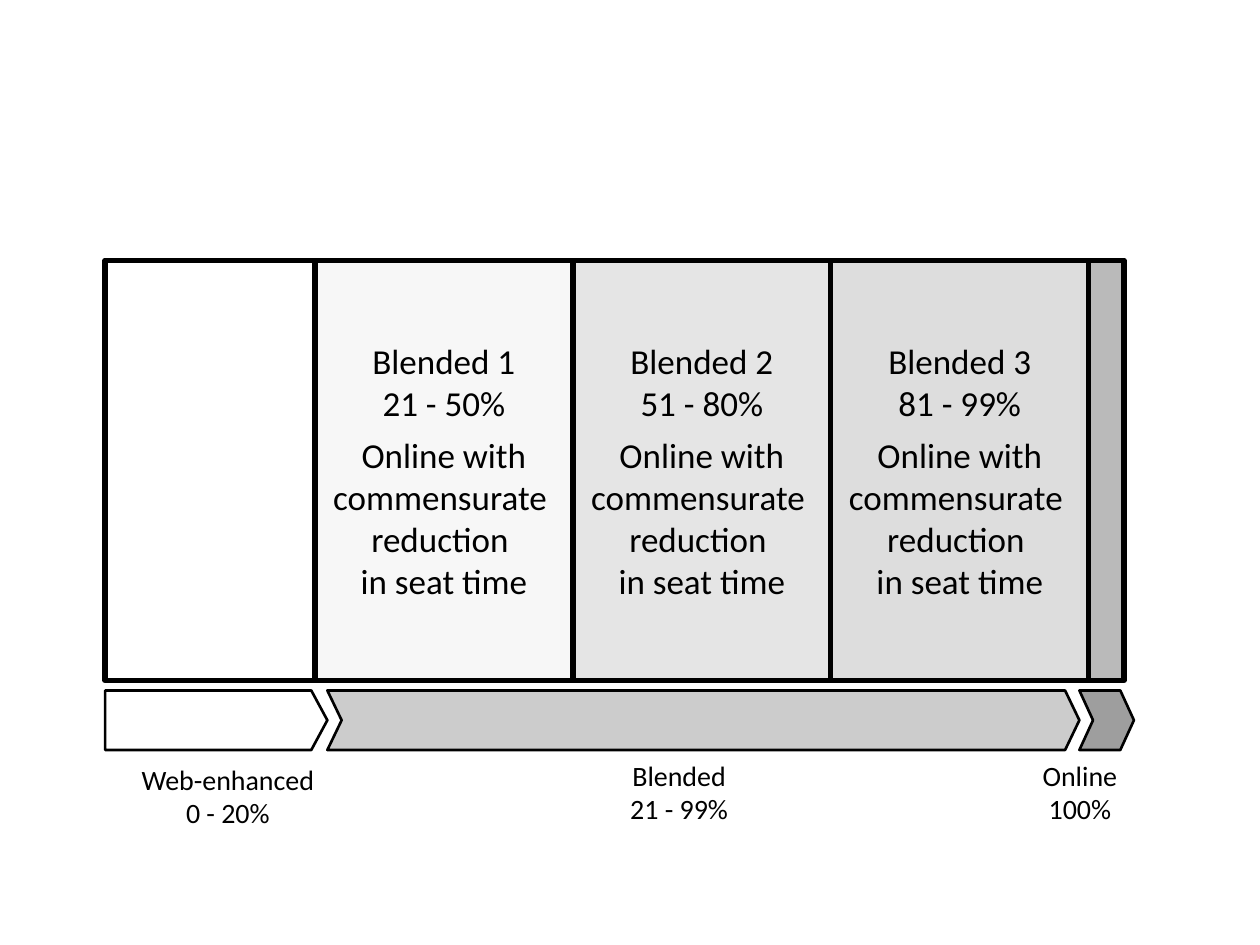
from lxml import etree
from pptx import Presentation
from pptx import util as u
from pptx.dml.color import RGBColor
from pptx.enum import shapes, text
from pptx.oxml.ns import qn

COLORS = {
    "white": "FFFFFF", "black": "000000", "navy": "000066", "near_black": "0D0D0D",
    "pale": "D9D9D9", "mid": "808080", "dark": "595959",
}
FONT = "Calibri"

# title, share, fill
LEVELS = [
    ("Blended 1", "21 - 50%", "pale"),
    ("Blended 2", "51 - 80%", "mid"),
    ("Blended 3", "81 - 99%", "dark"),
]
SEAT_TIME = ["Online with", "commensurate ", "reduction ", "in seat time"]

# shape, left, right, adjustment, fill, opacity %
ARROWS = [
    (shapes.MSO_SHAPE.PENTAGON, 2.12, 6.6, 0.27, "white", 50),
    (shapes.MSO_SHAPE.CHEVRON, 6.6, 21.76, 0.24, "mid", 40),
    (shapes.MSO_SHAPE.CHEVRON, 21.76, 22.86, 0.25, "near_black", 40),
]
# lines, left, top, width
LABELS = [
    (["Web-enhanced", "0 - 20%"], 2.59, 15.37, 4.01),
    (["Blended", "21 - 99%"], 12.4, 15.29, 2.58),
    (["Online", "100%"], 20.96, 15.29, 1.62),
]

BAND_LEFT, BAND_TOP, BAND_HEIGHT = 2.12, 5.25, 8.47
LEVELS_LEFT, LEVEL_WIDTH = 6.35, 5.2
LEVELS_RIGHT = LEVELS_LEFT + len(LEVELS) * LEVEL_WIDTH
BAND_RIGHT = 22.66
ARROW_TOP, ARROW_HEIGHT = 13.92, 1.2
LABEL_HEIGHT = 1.35


def rgb(name):
    return RGBColor.from_string(COLORS[name])


def add_filled(slide, kind, left, right, top, height, fill, opacity, line="black", weight=3):
    """Add an outlined shape whose fill has the given opacity in percent."""
    shape = slide.shapes.add_shape(
        kind, u.Cm(left), u.Cm(top), u.Cm(right - left), u.Cm(height))
    shape.shadow.inherit = False
    shape.fill.solid()
    shape.fill.fore_color.rgb = rgb(fill)
    color = shape.fill._xPr.find(qn("a:solidFill"))[0]
    etree.SubElement(color, qn("a:alpha"), val=str(opacity * 1000))
    shape.line.color.rgb = rgb(line)
    shape.line.width = u.Pt(weight)
    return shape


def write_lines(frame, lines, size):
    frame.word_wrap = False
    frame.text = "\n".join(lines)
    for paragraph in frame.paragraphs:
        paragraph.alignment = text.PP_ALIGN.CENTER
        paragraph.font.name = FONT
        paragraph.font.size = u.Pt(size)
        paragraph.font.color.rgb = rgb("black")


def add_band(slide):
    def panel(left, right, fill, opacity, **outline):
        return add_filled(slide, shapes.MSO_SHAPE.RECTANGLE, left, right,
                          BAND_TOP, BAND_HEIGHT, fill, opacity, **outline)

    panel(BAND_LEFT, LEVELS_LEFT, "white", 60)
    panel(LEVELS_LEFT, LEVELS_RIGHT, "white", 60, line="navy", weight=1.5)
    panel(LEVELS_RIGHT, BAND_RIGHT, "black", 27)
    for index, (title, share, fill) in enumerate(LEVELS):
        left = LEVELS_LEFT + index * LEVEL_WIDTH
        frame = panel(left, left + LEVEL_WIDTH, fill, 20).text_frame
        frame.vertical_anchor = text.MSO_ANCHOR.MIDDLE
        write_lines(frame, [title, share] + SEAT_TIME, 20)
        frame.paragraphs[2].space_before = u.Pt(6)


def add_scale(slide):
    for kind, left, right, adjustment, fill, opacity in ARROWS:
        arrow = add_filled(slide, kind, left, right, ARROW_TOP, ARROW_HEIGHT,
                           fill, opacity, weight=1.5)
        arrow.adjustments[0] = adjustment
    for lines, left, top, width in LABELS:
        frame = slide.shapes.add_textbox(
            u.Cm(left), u.Cm(top), u.Cm(width), u.Cm(LABEL_HEIGHT)).text_frame
        frame.margin_left = frame.margin_right = frame.margin_top = frame.margin_bottom = 0
        write_lines(frame, lines, 16)


def main():
    deck = Presentation()
    deck.slide_width, deck.slide_height = u.Cm(25.4), u.Cm(19.05)
    slide = deck.slides.add_slide(deck.slide_layouts[6])
    add_scale(slide)
    add_band(slide)
    deck.save("out.pptx")


if __name__ == "__main__":
    main()
